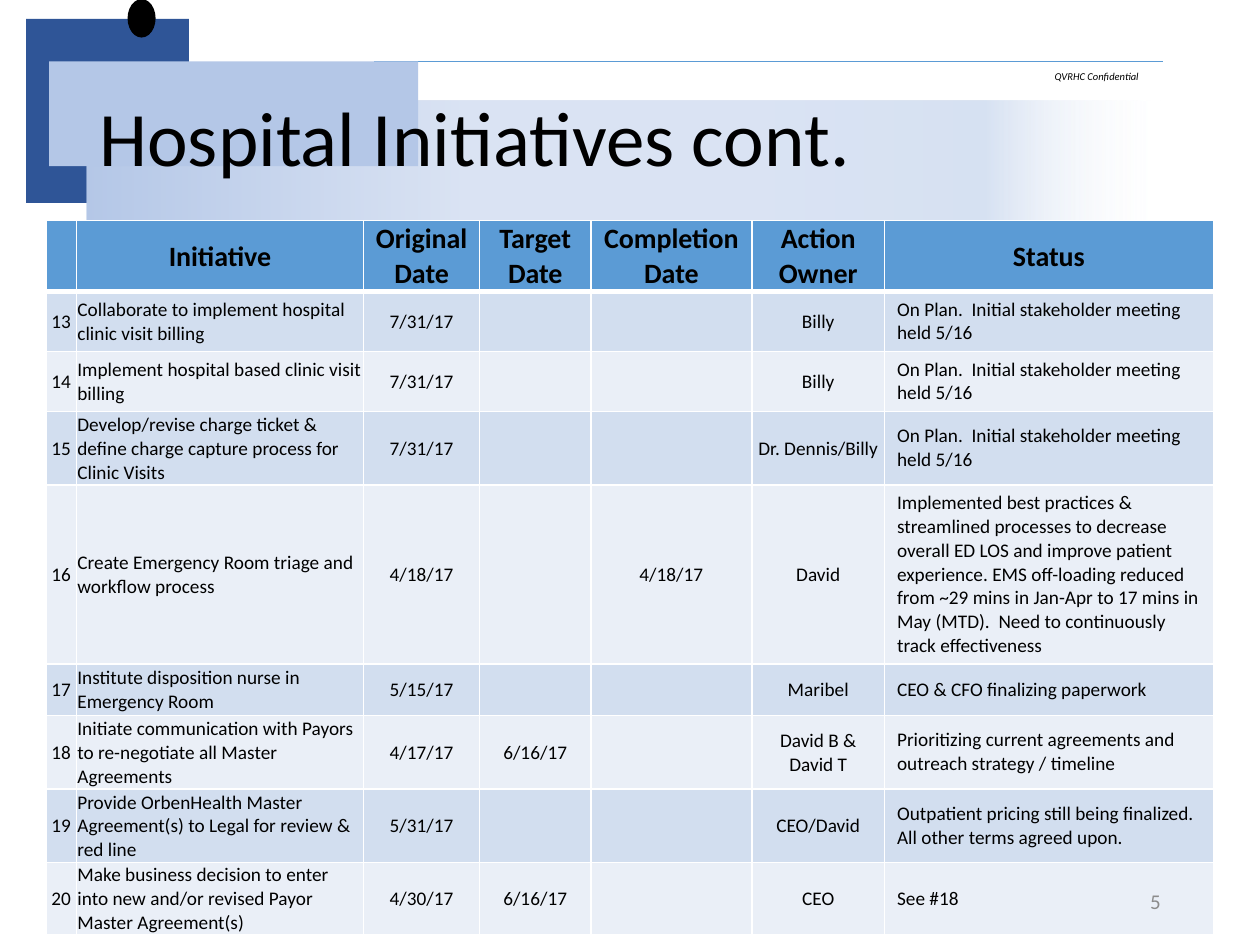
from pptx import Presentation
from pptx.dml.color import RGBColor
from pptx.enum.shapes import MSO_CONNECTOR, MSO_SHAPE
from pptx.enum.text import MSO_ANCHOR, MSO_AUTO_SIZE, PP_ALIGN
from pptx.oxml import parse_xml
from pptx.oxml.ns import nsdecls
from pptx.util import Cm, Pt
from lxml.etree import SubElement

FONT = "Calibri"
COLORS = {
    "navy": "2F5597", "sky": "B4C7E7", "ink": "000000", "rule": "5B9BD5",
    "header": "5B9BD5", "odd": "D2DEEF", "even": "EAEFF7",
    "grid": "FFFFFF", "number": "8C8C8C",
}
BAND_STOPS = [(0, "FFFFFF", 0), (17, "D6E1F2", 100), (39, "DAE3F3", 100),
              (65, "DAE3F3", 100), (100, "B4C7E7", 100)]

TITLE = "Hospital Initiatives cont."
CONFIDENTIAL = "QVRHC Confidential"
PAGE_NUMBER = "5"

ON_PLAN = "On Plan.  Initial stakeholder meeting held 5/16"
HEADINGS = ["", "Initiative", "Original Date", "Target Date",
            "Completion Date", "Action Owner", "Status"]
FIRST_NUMBER = 13
INITIATIVES = [
    ("Collaborate to implement hospital clinic visit billing",
     "7/31/17", "", "", "Billy", ON_PLAN),
    ("Implement hospital based clinic visit billing",
     "7/31/17", "", "", "Billy", ON_PLAN),
    ("Develop/revise charge ticket & define charge capture process for Clinic Visits",
     "7/31/17", "", "", "Dr. Dennis/Billy", ON_PLAN),
    ("Create Emergency Room triage and workflow process",
     "4/18/17", "", "4/18/17", "David",
     "Implemented best practices & streamlined processes to decrease overall ED LOS "
     "and improve patient experience. EMS off-loading reduced from ~29 mins in Jan-Apr "
     "to 17 mins in May (MTD).  Need to continuously track effectiveness"),
    ("Institute disposition nurse in Emergency Room",
     "5/15/17", "", "", "Maribel", "CEO & CFO finalizing paperwork"),
    ("Initiate communication with Payors to re-negotiate all Master Agreements",
     "4/17/17", "6/16/17", "", "David B &\nDavid T",
     "Prioritizing current agreements and outreach strategy / timeline"),
    ("Provide OrbenHealth Master Agreement(s) to Legal for review & red line",
     "5/31/17", "", "", "CEO/David",
     "Outpatient pricing still being finalized.  All other terms agreed upon."),
    ("Make business decision to enter into new and/or revised Payor Master Agreement(s)",
     "4/30/17", "6/16/17", "", "CEO", "See #18"),
]
COLUMN_WIDTHS = [0.61, 5.79, 2.34, 2.24, 3.25, 2.67, 6.63]
ROW_HEIGHTS = [1.42, 1.2, 1.2, 1.48, 3.6, 1.04, 1.48, 1.48, 1.45]
INITIATIVE_COLUMN, STATUS_COLUMN = 1, 6


def rgb(name):
    """Return the named colour."""
    return RGBColor.from_string(COLORS[name])


def write(frame, words, size, color="ink", align=PP_ALIGN.LEFT, bold=False, italic=False):
    """Fill a text frame and format its runs."""
    frame.text = words
    for paragraph in frame.paragraphs:
        paragraph.alignment = align
        for run in paragraph.runs:
            font = run.font
            font.name, font.size, font.bold, font.italic = FONT, Pt(size), bold, italic
            font.color.rgb = rgb(color)


def add_block(slide, preset, box, color):
    """Add a plain filled shape without outline or shadow."""
    block = slide.shapes.add_shape(preset, *map(Cm, box))
    block.shadow.inherit = False
    block.fill.solid()
    block.fill.fore_color.rgb = rgb(color)
    block.line.fill.background()
    return block


def fade(block):
    """Give a block the gradient that fades out to the right."""
    block.fill.gradient()
    block.fill.gradient_angle = 180
    stops = "".join(
        f'<a:gs pos="{position * 1000}"><a:srgbClr val="{color}">'
        f'<a:alpha val="{opacity * 1000}"/></a:srgbClr></a:gs>'
        for position, color, opacity in BAND_STOPS)
    old_stops = block.element.spPr.find(".//{*}gsLst")
    old_stops.getparent().replace(
        old_stops, parse_xml(f'<a:gsLst {nsdecls("a")}>{stops}</a:gsLst>'))


def add_label(slide, box, words, **style):
    """Add a wrapped text box."""
    frame = slide.shapes.add_textbox(*map(Cm, box)).text_frame
    frame.word_wrap = True
    write(frame, words, **style)
    return frame


def add_decoration(slide):
    """Draw the rule, the layered blocks and the confidentiality mark."""
    rule = slide.shapes.add_connector(
        MSO_CONNECTOR.STRAIGHT, Cm(7.54), Cm(1.24), Cm(23.44), Cm(1.24))
    rule.line.color.rgb = rgb("rule")
    rule.line.width = Pt(0.5)
    SubElement(rule.element.spPr, "{http://schemas.openxmlformats.org/drawingml/2006/main}effectLst")
    add_block(slide, MSO_SHAPE.RECTANGLE, (0.53, 0.38, 3.28, 3.71), "navy")
    pin = add_block(slide, MSO_SHAPE.OVAL, (2.59, 0, 0.53, 0.74), "ink")
    pin.line.color.rgb = rgb("ink")
    pin.line.width = Pt(1)
    fade(add_block(slide, MSO_SHAPE.RECTANGLE, (1.75, 2.03, 21.77, 2.67), "sky"))
    add_block(slide, MSO_SHAPE.RECTANGLE, (0.99, 1.24, 7.44, 2.11), "sky")
    mark = add_label(slide, (21.01, 1.27, 2.67, 0.84), CONFIDENTIAL, size=6, italic=True)
    mark.paragraphs[0].line_spacing = 1.07
    mark.paragraphs[0].space_after = Pt(6)


def place_title(slide):
    """Move the title placeholder in front of the blocks and format it."""
    title = slide.shapes.title
    title.left, title.top, title.width, title.height = map(Cm, (1.75, 1.02, 21.89, 3.68))
    write(title.text_frame, TITLE, 44)
    title.text_frame.vertical_anchor = MSO_ANCHOR.MIDDLE
    title.text_frame.auto_size = MSO_AUTO_SIZE.NONE
    title.text_frame.paragraphs[0].line_spacing = 0.9
    title.element.getparent().append(title.element)


def add_borders(cell, bottom):
    """Draw the white grid around a cell."""
    properties = cell._tc.get_or_add_tcPr()
    for place, (side, width) in enumerate([("L", 1), ("R", 1), ("T", 1), ("B", bottom)]):
        properties.insert(place, parse_xml(
            f'<a:ln{side} {nsdecls("a")} w="{Pt(width)}"><a:solidFill>'
            f'<a:srgbClr val="{COLORS["grid"]}"/></a:solidFill></a:ln{side}>'))


def add_initiatives(slide):
    """Build the table of initiatives."""
    rows = [HEADINGS] + [(str(number), *initiative)
                         for number, initiative in enumerate(INITIATIVES, FIRST_NUMBER)]
    table = slide.shapes.add_table(
        len(rows), len(HEADINGS), Cm(0.93), Cm(4.45),
        Cm(sum(COLUMN_WIDTHS)), Cm(sum(ROW_HEIGHTS))).table
    for column, width in zip(table.columns, COLUMN_WIDTHS):
        column.width = Cm(width)
    for r, (row, height) in enumerate(zip(rows, ROW_HEIGHTS)):
        table.rows[r].height = Cm(height)
        heading = r == 0
        shade = "header" if heading else ("odd" if r % 2 else "even")
        for c, words in enumerate(row):
            cell = table.cell(r, c)
            cell.fill.solid()
            cell.fill.fore_color.rgb = rgb(shade)
            add_borders(cell, 3 if heading else 1)
            if not words:
                continue
            cell.vertical_anchor = MSO_ANCHOR.MIDDLE
            if heading or c != STATUS_COLUMN:
                cell.margin_left = cell.margin_right = cell.margin_top = Cm(0.02)
                cell.margin_bottom = 0
            left = not heading and c in (INITIATIVE_COLUMN, STATUS_COLUMN)
            write(cell.text_frame, words, 16 if heading else 11, bold=heading,
                  align=PP_ALIGN.LEFT if left else PP_ALIGN.CENTER)


def main():
    """Build and save the slide."""
    deck = Presentation()
    deck.slide_width, deck.slide_height = Cm(25.4), Cm(19.05)
    slide = deck.slides.add_slide(deck.slide_layouts[5])
    add_decoration(slide)
    place_title(slide)
    add_initiatives(slide)
    number = add_label(slide, (17.93, 17.65, 5.72, 1.02), PAGE_NUMBER,
                       size=12, color="number", align=PP_ALIGN.RIGHT)
    number.vertical_anchor = MSO_ANCHOR.MIDDLE
    deck.save("out.pptx")


if __name__ == "__main__":
    main()
